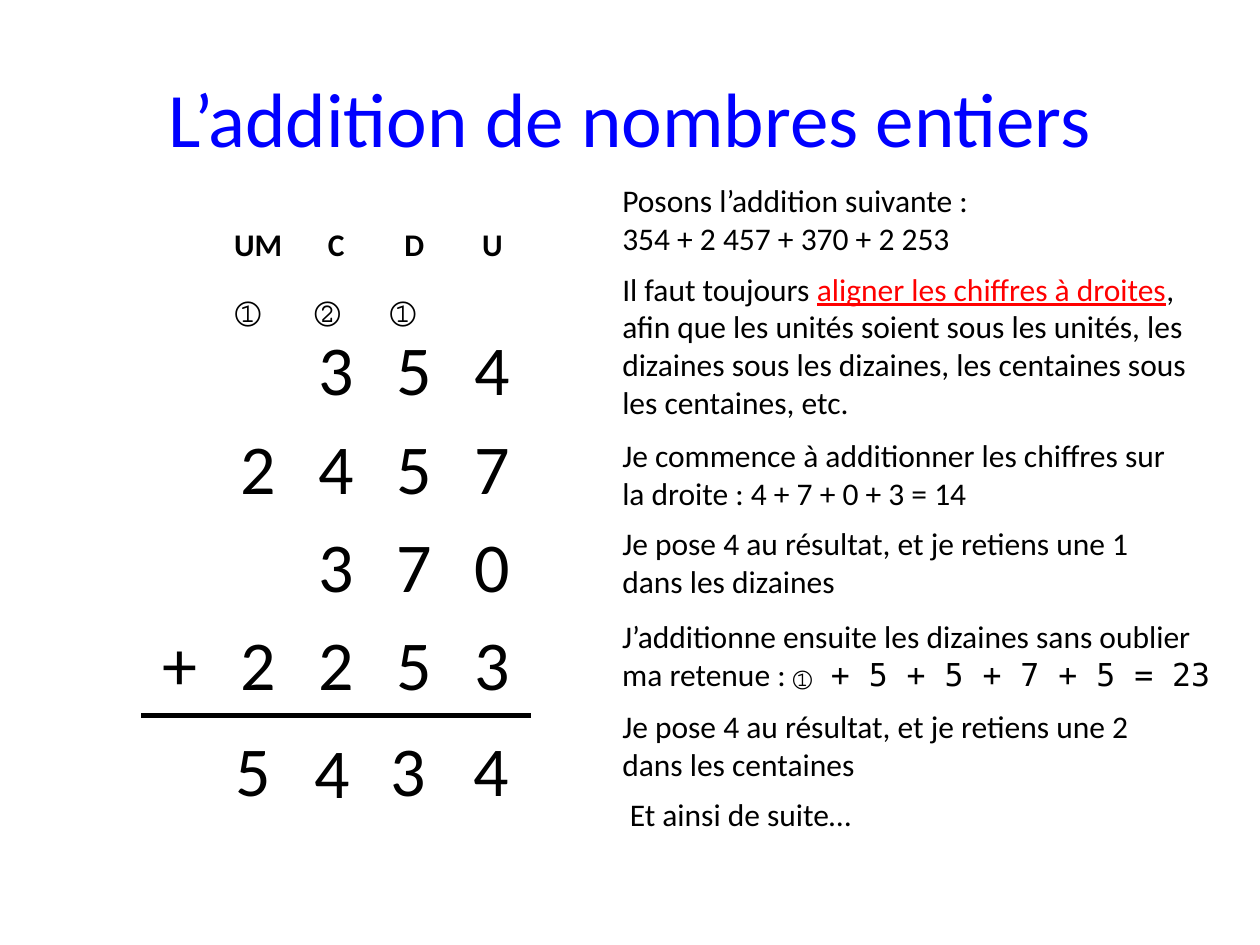
from dataclasses import dataclass

from lxml import etree
from pptx import Presentation
from pptx.dml.color import RGBColor
from pptx.enum import text
from pptx.oxml import ns
from pptx.util import Inches, Pt


@dataclass(frozen=True)
class Theme:
    """Colours, fonts and type sizes of the lesson."""
    title: str = "0000FF"
    ink: str = "000000"
    accent: str = "FF0000"
    font: str = "Calibri"
    mono: str = "DejaVu Sans Mono"
    title_size: int = 44
    digit_size: int = 40
    carry_size: int = 24
    body_size: int = 18


THEME = Theme()
BODY = {"name": THEME.font, "size": THEME.body_size, "color": THEME.ink}
HEADING = {**BODY, "bold": True}
DIGIT = {**BODY, "size": THEME.digit_size, "bold": False}
CARRY = {**BODY, "name": THEME.mono, "size": THEME.carry_size}
TITLE = {**BODY, "size": THEME.title_size, "color": THEME.title}
MONO = {**BODY, "name": THEME.mono}
KEY = {**BODY, "color": THEME.accent, "underline": True}

PLAIN_TABLE = "{2D5ABB26-0587-4C30-8999-92F81FD0307C}"
COLUMN = 0.62
ROW_HEIGHTS = [0.4, 0.4] + [0.78] * 4 + [0.57] * 2
SUM_ROW = 5
ROWS = [
    ["", "", "UM", "C", "D", "U"],
    [""] * 6,
    ["", "", "", "3", "5", "4"],
    ["", "", "2", "4", "5", "7"],
    ["", "", "", "3", "7", "0"],
    ["", "+", "2", "2", "5", "3"],
    [""] * 6,
    [""] * 6,
]

STEPS = [
    ((4.84, 1.39, 4.72, 0.71), [[("Posons l’addition suivante :", BODY)],
                                [("354 + 2 457 + 370 + 2 253", BODY)]]),
    ((4.84, 2.09, 4.72, 1.31), [[
        ("Il faut toujours ", BODY),
        ("aligner les chiffres à droites", KEY),
        (", afin que les unités soient sous les unités, les dizaines sous les "
         "dizaines, les centaines sous les centaines, etc.", BODY)]]),
    ((4.84, 3.41, 4.72, 0.71), [[(
        "Je commence à additionner les chiffres sur la droite : "
        "4 + 7 + 0 + 3 = 14", BODY)]]),
    ((4.84, 4.11, 4.72, 0.71), [[(
        "Je pose 4 au résultat, et je retiens une 1 dans les dizaines", BODY)]]),
    ((4.84, 4.85, 4.9, 0.71), [[
        ("J’additionne ensuite les dizaines sans oublier ma retenue : ", BODY),
        ("① + 5 + 5 + 7 + 5 = 23", MONO)]]),
    ((4.84, 5.56, 4.72, 0.71), [[(
        "Je pose 4 au résultat, et je retiens une 2 dans les centaines", BODY)]]),
    ((4.9, 6.26, 4.72, 0.4), [[("Et ainsi de suite…", BODY)]]),
]

RESULT = [(1.77, 5.72, "5"), (2.4, 5.73, "4"), (3, 5.72, "3"), (3.66, 5.72, "4")]
CARRIES = [(1.77, 2.18, "①"), (2.4, 2.18, "②"), (3, 2.18, "①")]


def style_font(font, style):
    """Apply a dict of format values to a font."""
    for name, value in style.items():
        if name == "color":
            font.color.rgb = RGBColor.from_string(value)
        else:
            setattr(font, name, Pt(value) if name == "size" else value)


def add_text(page, box, paragraphs, align=None, anchor=text.MSO_ANCHOR.TOP,
             fit=text.MSO_AUTO_SIZE.SHAPE_TO_FIT_TEXT):
    """Place wrapped paragraphs of styled spans in a box."""
    frame = page.shapes.add_textbox(*map(Inches, box)).text_frame
    for name, value in {"word_wrap": True, "auto_size": fit,
                        "vertical_anchor": anchor}.items():
        setattr(frame, name, value)
    for index, spans in enumerate(paragraphs):
        para = frame.add_paragraph() if index else frame.paragraphs[0]
        para.alignment = align
        for words, style in spans:
            span = para.add_run()
            span.text = words
            style_font(span.font, style)


def add_title(page, box):
    """Place the centred title."""
    add_text(page, box, [[("L’addition de nombres entiers", TITLE)]],
             text.PP_ALIGN.CENTER, text.MSO_ANCHOR.MIDDLE, text.MSO_AUTO_SIZE.NONE)


def set_border(cell, side, width):
    """Set one side of a cell to a solid line, or to none at zero width."""
    line = etree.Element(ns.qn(f"a:ln{side}"), w=str(Pt(width)))
    if width:
        fill = etree.SubElement(line, ns.qn("a:solidFill"))
        etree.SubElement(fill, ns.qn("a:srgbClr"), val=THEME.ink)
    else:
        etree.SubElement(line, ns.qn("a:noFill"))
    cell._tc.get_or_add_tcPr().insert(0, line)


def add_column_sum(page, left, top):
    """Place the addition grid with its sum line."""
    width = COLUMN * len(ROWS[0])
    grid = page.shapes.add_table(
        len(ROWS), len(ROWS[0]),
        *map(Inches, (left, top, width, sum(ROW_HEIGHTS)))).table
    grid.first_row = grid.horz_banding = False
    grid._tbl.tblPr.find(ns.qn("a:tableStyleId")).text = PLAIN_TABLE
    for column in grid.columns:
        column.width = Inches(COLUMN)
    for r, (values, height) in enumerate(zip(ROWS, ROW_HEIGHTS)):
        grid.rows[r].height = Inches(height)
        for c, value in enumerate(values):
            cell = grid.cell(r, c)
            cell.fill.background()
            cell.vertical_anchor = text.MSO_ANCHOR.MIDDLE
            para = cell.text_frame.paragraphs[0]
            para.alignment = text.PP_ALIGN.CENTER
            if value:
                span = para.add_run()
                span.text = value
                style_font(span.font, DIGIT if r else HEADING)
            for side, ruled_row in (("B", SUM_ROW), ("T", SUM_ROW + 1)):
                set_border(cell, side, 3 if c and r == ruled_row else 0)


def add_marks(page, marks, height, style):
    """Place single digits written over the grid."""
    for left, top, mark in marks:
        add_text(page, (left, top, 0.63, height), [[(mark, style)]])


def add_steps(page):
    """Place the explanation beside the grid."""
    for box, paragraphs in STEPS:
        add_text(page, box, paragraphs)


def main():
    """Build and save the lesson."""
    deck = Presentation()
    deck.slide_width, deck.slide_height = Inches(10), Inches(7.5)
    page = deck.slides.add_slide(deck.slide_layouts[6])
    add_title(page, (0.5, 0.3, 9, 1.25))
    add_column_sum(page, 0.5, 1.75)
    add_steps(page)
    add_marks(page, RESULT, 0.77, DIGIT)
    add_marks(page, CARRIES, 0.5, CARRY)
    deck.save("out.pptx")


if __name__ == "__main__":
    main()
